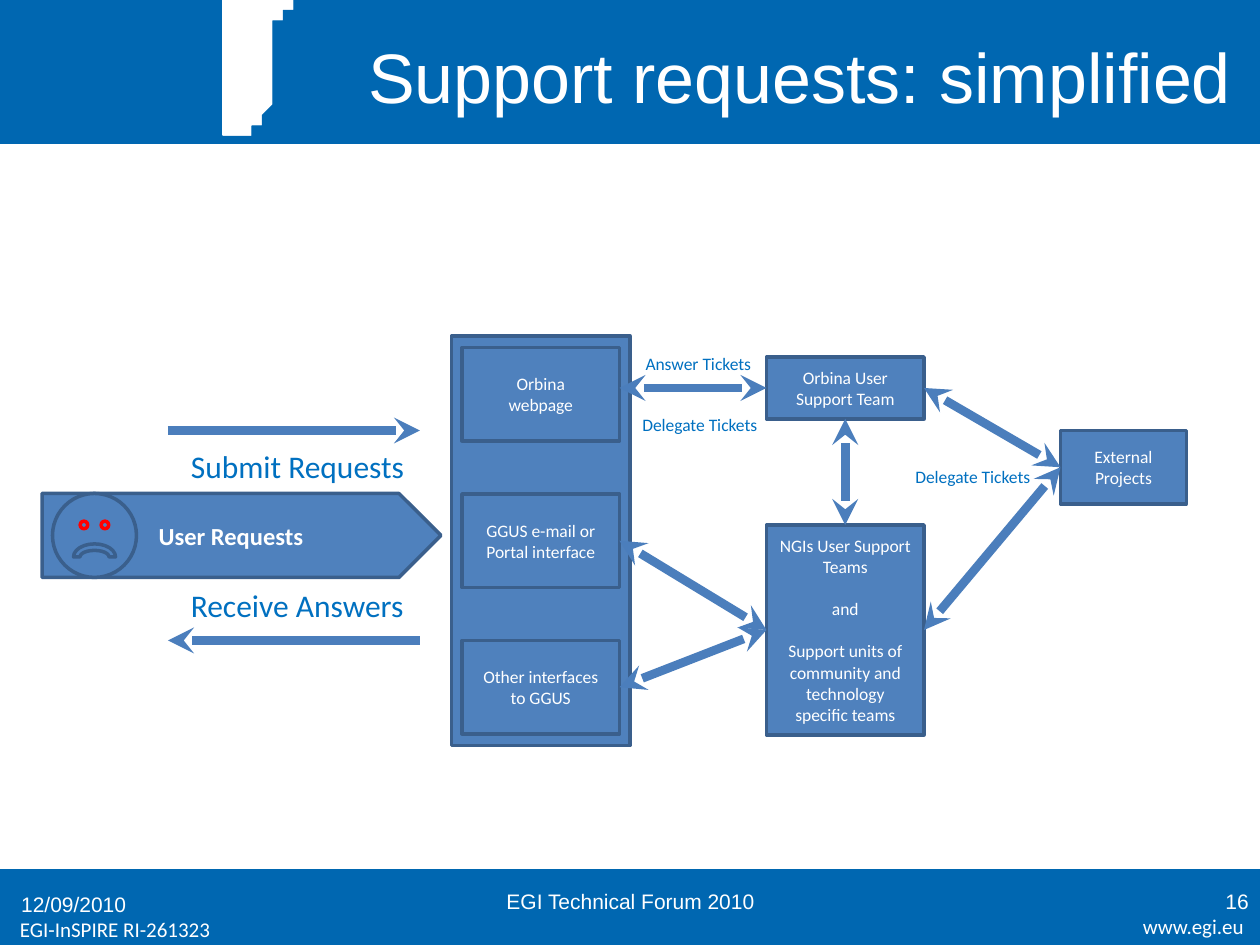
from lxml import etree
from pptx import Presentation
from pptx import util as u
from pptx.dml.color import RGBColor
from pptx.enum import shapes, text
from pptx.oxml.ns import qn

COLUMNS, ROWS = 120, 90
CELL = u.Inches(10) / COLUMNS
BAND_BLUE = RGBColor(0x00, 0x67, 0xB1)
BOX_BLUE = RGBColor(0x4F, 0x81, 0xBD)
EDGE_BLUE = RGBColor(0x3A, 0x5F, 0x8C)
ARROW_BLUE = RGBColor(0x4B, 0x7E, 0xBC)
LABEL_BLUE = RGBColor(0x00, 0x70, 0xC0)
WHITE = RGBColor(0xFF, 0xFF, 0xFF)
RED = RGBColor(0xFF, 0x00, 0x00)
LEFT, CENTER, RIGHT = text.PP_ALIGN.LEFT, text.PP_ALIGN.CENTER, text.PP_ALIGN.RIGHT
TOP_SIDE, LEFT_SIDE, BOTTOM_SIDE, RIGHT_SIDE = range(4)


def cells(*values):
    return [u.Emu(round(value * CELL)) for value in values]


def write(shape, lines, size, color, font="Calibri", align=CENTER,
          anchor=text.MSO_ANCHOR.MIDDLE, bold=False, gap=0, wrap=True):
    frame = shape.text_frame
    frame.word_wrap = wrap
    frame.vertical_anchor = anchor
    for index, line in enumerate(lines):
        paragraph = frame.add_paragraph() if index else frame.paragraphs[0]
        paragraph.alignment = align
        if index and gap:
            paragraph.space_before = u.Pt(gap)
        run = paragraph.add_run()
        run.text = line
        run.font.name, run.font.size, run.font.bold = font, u.Pt(size), bold
        run.font.color.rgb = color


def paint(shape, fill, edge, width):
    shape.shadow.inherit = False
    shape.fill.solid()
    shape.fill.fore_color.rgb = fill
    shape.line.color.rgb = edge
    shape.line.width = u.Pt(width)
    return shape


def add_box(slide, box, lines=(), kind=shapes.MSO_SHAPE.RECTANGLE, fill=BOX_BLUE,
            edge=EDGE_BLUE, width=2, size=10, **style):
    shape = paint(slide.shapes.add_shape(kind, *cells(*box)), fill, edge, width)
    write(shape, lines, size, WHITE, **style)
    return shape


def add_label(slide, box, line, size, color=LABEL_BLUE, **style):
    write(slide.shapes.add_textbox(*cells(*box)), [line], size, color, **style)


def add_arrow(slide, start, end, heads=("headEnd", "tailEnd")):
    points = [(0, 0) if len(tie) == 2 and hasattr(tie[0], "shape_id") else tie
              for tie in (start, end)]
    arrow = slide.shapes.add_connector(
        shapes.MSO_CONNECTOR.STRAIGHT, *cells(*points[0], *points[1]))
    for tie, connect in ((start, arrow.begin_connect), (end, arrow.end_connect)):
        if hasattr(tie[0], "shape_id"):
            connect(*tie)
    arrow.line.color.rgb = ARROW_BLUE
    arrow.line.width = u.Pt(5)
    line = arrow.line._get_or_add_ln()
    for head in heads:
        etree.SubElement(line, qn("a:" + head), type="stealth")
    etree.SubElement(arrow._element.spPr, qn("a:effectLst"))


def curve(start, first, second, end, steps=40):
    for step in range(1, steps + 1):
        t = step / steps
        weights = ((1 - t) ** 3, 3 * t * (1 - t) ** 2, 3 * t * t * (1 - t), t ** 3)
        yield tuple(sum(w * p[axis] for w, p in zip(weights, (start, first, second, end)))
                    for axis in (0, 1))


def add_header(slide, box, title):
    left, top, width, height = box
    add_box(slide, box, fill=BAND_BLUE, edge=BAND_BLUE, width=0.75)
    x, right, bottom = left + 0.177 * width, left + 0.374 * width, top + 0.94 * height
    add_box(slide, (x, top, right - x, bottom - top), fill=WHITE, edge=WHITE, width=0.75)
    bend = x + 0.4 * (right - x)
    corner = (x, bottom)
    outline = [(right, bottom), corner,
               *curve(corner, (bend, bottom), (x, top), (bend, top))]
    builder = slide.shapes.build_freeform(right, top, scale=CELL)
    builder.add_line_segments(outline, close=True)
    paint(builder.convert_to_shape(), BAND_BLUE, BAND_BLUE, 0.75)
    shape = slide.shapes.title
    slide.shapes._spTree.append(shape._element)
    shape.left, shape.top, shape.width, shape.height = cells(
        left + 0.272 * width, top + 0.11 * height, 0.725 * width, 0.83 * height)
    write(shape, [title], 40, WHITE, font="Arial")


def add_footer(slide, box):
    left, top, width, height = box
    add_box(slide, box, fill=BAND_BLUE, edge=BAND_BLUE, width=0)
    for x, y, w, h, line, font, align in (
        (0.839, 0.5, 0.158, 0.5, "www.egi.eu", "Calibri", RIGHT),
        (0.006, 0.54, 0.25, 0.5, "EGI-InSPIRE RI-261323", "Calibri", LEFT),
        (0.007, 0.12, 0.233, 0.67, "12/09/2010", "Arial", LEFT),
        (0.342, 0.08, 0.317, 0.67, "EGI Technical Forum 2010", "Arial", CENTER),
        (0.768, 0.08, 0.233, 0.67, "16", "Arial", RIGHT),
    ):
        add_label(slide, (left + x * width, top + y * height, w * width, h * height),
                  line, 12, WHITE, font=font, align=align)


def add_face(slide, box):
    left, top, size, _ = box
    oval = shapes.MSO_SHAPE.OVAL
    add_box(slide, box, kind=oval)
    for x in (0.33, 0.58):
        add_box(slide, (left + x * size, top + 0.33 * size, 0.09 * size, 0.09 * size),
                kind=oval, edge=RED)
    add_box(slide, (left + 0.25 * size, top + 0.6 * size, 0.5 * size, 0.31 * size),
            kind=shapes.MSO_SHAPE.BLOCK_ARC)


def add_user(slide, box):
    left, top, width, height = box
    add_box(slide, box, ["User Requests"], shapes.MSO_SHAPE.PENTAGON, size=14, bold=True)
    add_face(slide, (left + 1, top, height, height))
    for line, label_top, arrow_top, head in (
        ("Submit Requests", top - 5, top - 6, "tailEnd"),
        ("Receive Answers", top + height + 0.2, top + height + 6, "headEnd"),
    ):
        add_label(slide, (left + 13, label_top, 23, 4.8), line, 18,
                  align=LEFT, anchor=text.MSO_ANCHOR.TOP, wrap=False)
        add_arrow(slide, (left + 12, arrow_top), (left + 36, arrow_top), [head])


def add_interfaces(slide, box):
    left, top, width, height = box
    add_box(slide, box)
    contents = (["Orbina", "webpage"], ["GGUS e-mail or Portal interface"],
                ["Other interfaces to GGUS"])
    return [add_box(slide, (left + 1, top + 1.1 + 13.95 * row, width - 2, 8.9), lines)
            for row, lines in enumerate(contents)]


def add_teams(slide, box, interfaces):
    left, top, width, height = box
    webpage, portal, other = interfaces
    central = add_box(slide, (left, top, 15, 5.9), ["Orbina User Support Team"])
    national = add_box(slide, (left, top + 16, 15, 20), [
        "NGIs User Support Teams", "and",
        "Support units of community and technology specific teams"], gap=12)
    external = add_box(slide, (left + width - 12, top + 7, 12, 7), ["External", "Projects"])
    for start, end in (
        ((portal, RIGHT_SIDE), (national, LEFT_SIDE)),
        ((other, RIGHT_SIDE), (national, LEFT_SIDE)),
        ((national, RIGHT_SIDE), (external, LEFT_SIDE)),
        ((central, RIGHT_SIDE), (external, LEFT_SIDE)),
        ((central, BOTTOM_SIDE), (national, TOP_SIDE)),
        ((left - 14, top + 2.95), (central, LEFT_SIDE)),
    ):
        add_arrow(slide, start, end)
    for x, y, w, line in ((-12.7, -1, 12.7, "Answer Tickets"),
                          (-13, 4.8, 13.7, "Delegate Tickets"),
                          (13, 9.8, 13.7, "Delegate Tickets")):
        add_label(slide, (left + x, top + y, w, 3.2), line, 10,
                  align=LEFT, anchor=text.MSO_ANCHOR.TOP, wrap=False)


def main():
    presentation = Presentation()
    presentation.slide_width, presentation.slide_height = cells(COLUMNS, ROWS)
    slide = presentation.slides.add_slide(presentation.slide_layouts[5])
    add_footer(slide, (0, 82.8, COLUMNS, 7.2))
    add_header(slide, (0, 0, COLUMNS, 13.7), "Support requests: simplified")
    interfaces = add_interfaces(slide, (43, 32, 17, 39))
    add_user(slide, (4, 47, 38, 8))
    add_teams(slide, (73, 34, 40, 36), interfaces)
    presentation.save("out.pptx")


if __name__ == "__main__":
    main()
